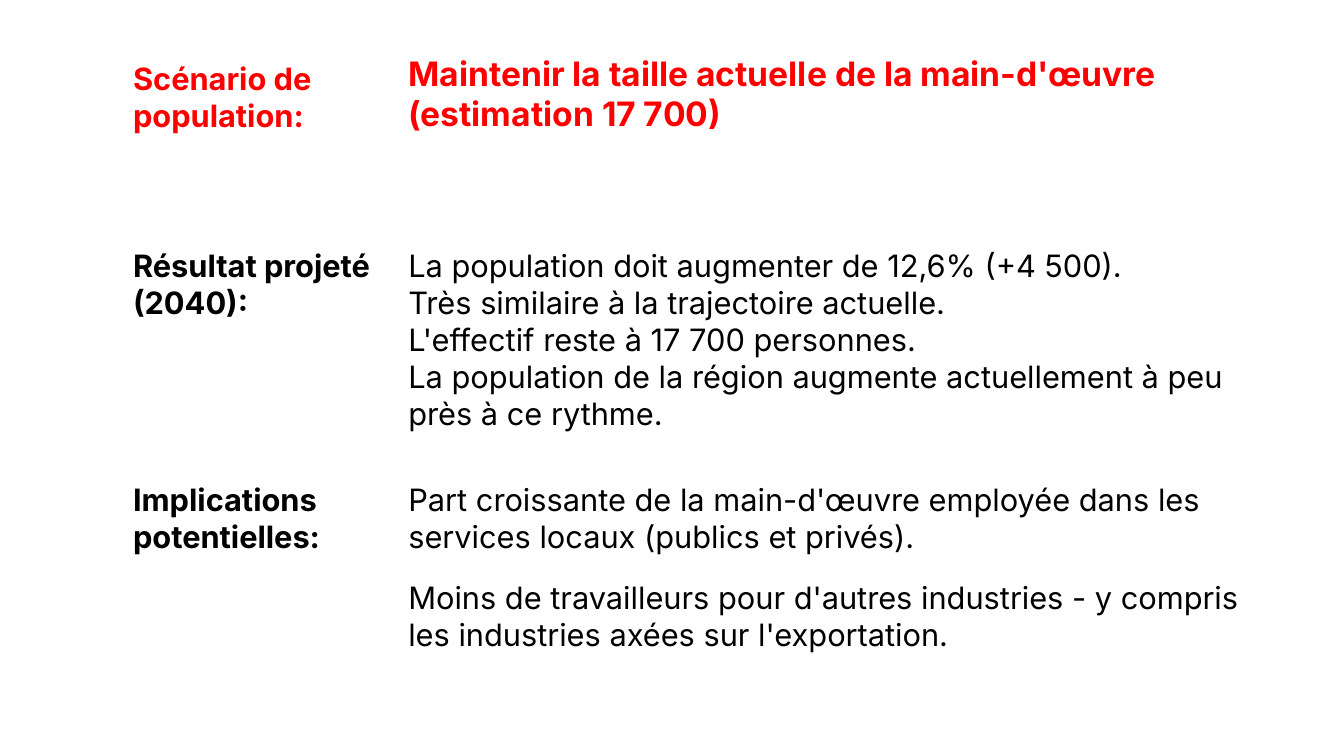
from dataclasses import dataclass

from lxml.etree import SubElement
from pptx import Presentation
from pptx.dml.color import RGBColor
from pptx.enum.text import MSO_ANCHOR
from pptx.oxml.ns import qn
from pptx.util import Inches, Pt


@dataclass(frozen=True)
class Theme:
    font: str = "Inter"
    accent: str = "FF0000"
    text: str = "000000"
    border: str = "FFFFFF"
    body_size: int = 22
    headline_size: int = 24


theme = Theme()

SCENARIO = [
    ("Scénario de population:",
     ["Maintenir la taille actuelle de la main-d'œuvre (estimation 17 700)"]),
    ("Résultat projeté (2040):",
     ["La population doit augmenter de 12,6% (+4 500).",
      "Très similaire à la trajectoire actuelle.",
      "L'effectif reste à 17 700 personnes.",
      "La population de la région augmente actuellement à peu près à ce rythme."]),
    ("Implications potentielles:",
     ["Part croissante de la main-d'œuvre employée dans les services locaux "
      "(publics et privés)."]),
    ("",
     ["Moins de travailleurs pour d'autres industries - y compris les industries "
      "axées sur l'exportation."]),
    ("", []),
]
COLUMN_WIDTHS = [2.73, 8.61]
ROW_HEIGHTS = [1.01, 2.96, 1.22, 0.97, 1.1]


def add_borders(cell):
    properties = cell._tc.get_or_add_tcPr()
    for side in ("lnL", "lnR", "lnT", "lnB"):
        line = SubElement(properties, qn(f"a:{side}"), w=str(Pt(1)))
        fill = SubElement(line, qn("a:solidFill"))
        SubElement(fill, qn("a:srgbClr"), val=theme.border)


def fill_cell(cell, lines, size, color, bold):
    cell.margin_left = cell.margin_right = cell.margin_top = Inches(0.01)
    cell.margin_bottom = 0
    cell.vertical_anchor = MSO_ANCHOR.BOTTOM
    add_borders(cell)
    cell.fill.background()
    cell.text_frame.text = "\n".join(lines)
    for paragraph in cell.text_frame.paragraphs:
        for run in paragraph.runs:
            run.font.name = theme.font
            run.font.size = Pt(size)
            run.font.bold = bold
            run.font.color.rgb = RGBColor.from_string(color)


prs = Presentation()
prs.slide_width, prs.slide_height = Inches(13.33), Inches(7.5)
slide = prs.slides.add_slide(prs.slide_layouts[6])

table = slide.shapes.add_table(
    len(ROW_HEIGHTS), len(COLUMN_WIDTHS), Inches(1.31), Inches(0.33),
    Inches(sum(COLUMN_WIDTHS)), Inches(sum(ROW_HEIGHTS))).table
table.first_row = table.horz_banding = False
for column, width in zip(table.columns, COLUMN_WIDTHS):
    column.width = Inches(width)
for row, height in zip(table.rows, ROW_HEIGHTS):
    row.height = Inches(height)

for index, (label, details) in enumerate(SCENARIO):
    is_headline = index == 0
    color = theme.accent if is_headline else theme.text
    detail_size = theme.headline_size if is_headline else theme.body_size
    fill_cell(table.cell(index, 0), [label], theme.body_size, color, True)
    fill_cell(table.cell(index, 1), details, detail_size, color, is_headline)
table.cell(1, 0).vertical_anchor = MSO_ANCHOR.MIDDLE

prs.save("out.pptx")
